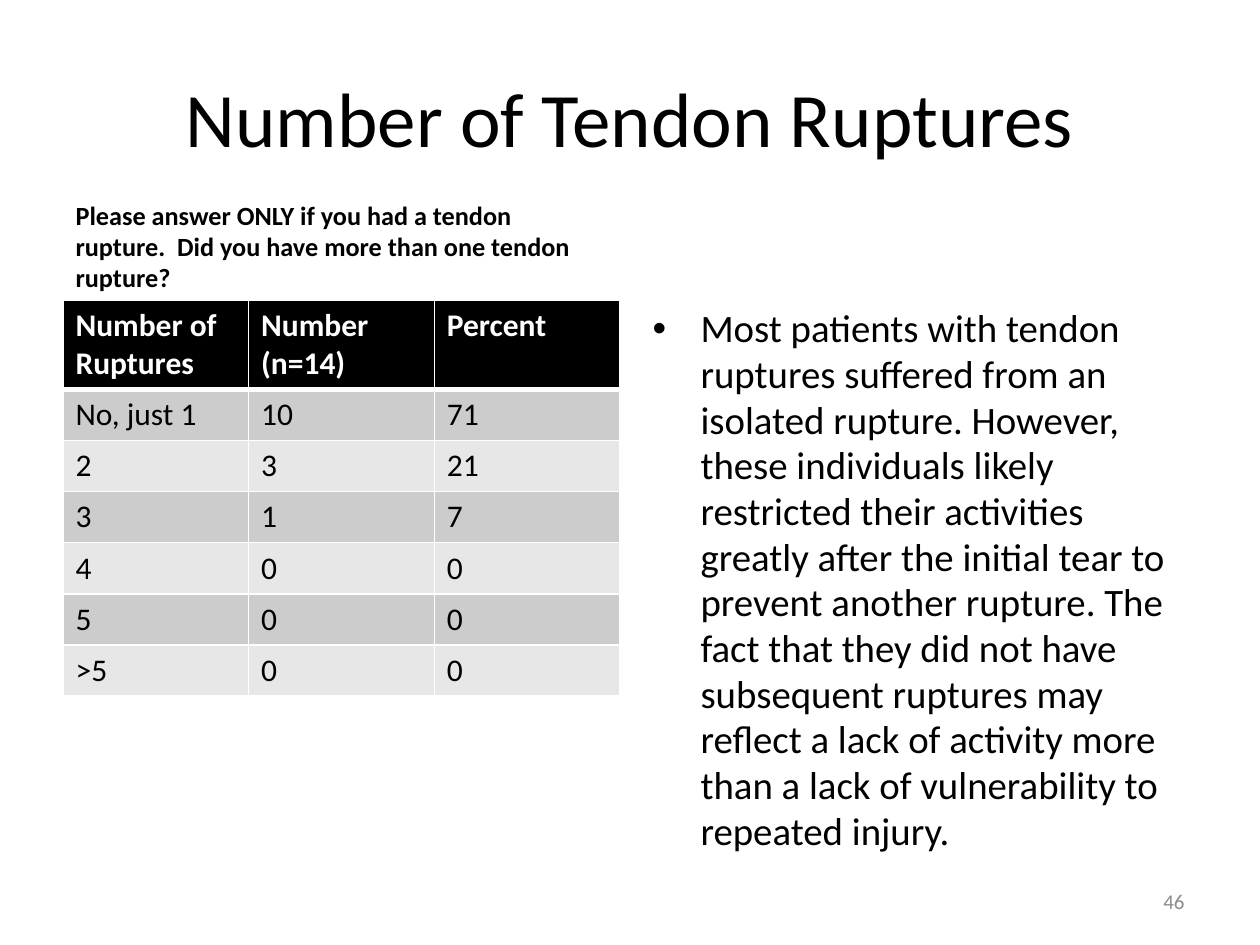
from lxml.etree import SubElement
from pptx import Presentation
from pptx.dml.color import RGBColor
from pptx.enum.text import MSO_ANCHOR, MSO_AUTO_SIZE, PP_ALIGN
from pptx.oxml.ns import qn
from pptx.util import Inches, Pt

FONT = "Calibri"
BLACK, WHITE, GRAY = "000000", "FFFFFF", "8C8C8C"
BANDS = ("CCCCCC", "E7E7E7")
MARGIN, COLUMN, GUTTER = 0.5, 4.42, 0.16
CONTENT_TOP = 2.38
HEADER_HEIGHT, ROW_HEIGHT = 0.7, 0.4
ROWS = [
    ("Number of Ruptures", "Number (n=14)", "Percent"),
    ("No, just 1", "10", "71"),
    ("2", "3", "21"),
    ("3", "1", "7"),
    ("4", "0", "0"),
    ("5", "0", "0"),
    (">5", "0", "0"),
]
QUESTION = (
    "Please answer ONLY if you had a tendon rupture.  "
    "Did you have more than one tendon rupture?"
)
FINDING = (
    "Most patients with tendon ruptures suffered from an isolated rupture. "
    "However, these individuals likely restricted their activities greatly "
    "after the initial tear to prevent another rupture. The fact that they "
    "did not have subsequent ruptures may reflect a lack of activity more "
    "than a lack of vulnerability to repeated injury."
)


def color(value):
    return RGBColor.from_string(value)


def write(frame, text, size, fill=BLACK, bold=False, align=PP_ALIGN.LEFT):
    paragraph = frame.paragraphs[0]
    paragraph.alignment = align
    run = paragraph.add_run()
    run.text = text
    run.font.name = FONT
    run.font.size = Pt(size)
    run.font.bold = bold
    run.font.color.rgb = color(fill)
    return paragraph


def place(shape, box, anchor):
    shape.left, shape.top, shape.width, shape.height = map(Inches, box)
    frame = shape.text_frame
    frame.word_wrap = True
    frame.auto_size = MSO_AUTO_SIZE.NONE
    frame.vertical_anchor = anchor
    return frame


def add_title(shape, box):
    frame = place(shape, box, MSO_ANCHOR.MIDDLE)
    write(frame, "Number of Tendon Ruptures", 44, align=PP_ALIGN.CENTER)


def add_question(shape, box):
    frame = place(shape, box, MSO_ANCHOR.BOTTOM)
    write(frame, QUESTION, 15, bold=True).line_spacing = 0.98


def add_finding(shape, box):
    frame = place(shape, box, MSO_ANCHOR.TOP)
    paragraph = write(frame, FINDING, 22.2)
    paragraph.line_spacing = 0.98
    properties = paragraph._p.get_or_add_pPr()
    properties.set("marL", str(Inches(0.38)))
    properties.set("indent", str(Inches(-0.38)))
    SubElement(properties, qn("a:buFont")).set("typeface", "Arial")
    SubElement(properties, qn("a:buChar")).set("char", "•")


def style_cell(cell, fill, edges):
    properties = cell._tc.get_or_add_tcPr()
    for edge, width in edges.items():
        line = SubElement(properties, qn(f"a:{edge}"))
        line.set("w", str(Pt(width)))
        solid = SubElement(line, qn("a:solidFill"))
        SubElement(solid, qn("a:srgbClr")).set("val", WHITE)
    cell.fill.solid()
    cell.fill.fore_color.rgb = color(fill)


def add_rupture_table(slide, box):
    left, top, width, height = map(Inches, box)
    columns = len(ROWS[0])
    table = slide.shapes.add_table(len(ROWS), columns, left, top, width, height).table
    for column in table.columns:
        column.width = width // columns
    for index, values in enumerate(ROWS):
        header = index == 0
        table.rows[index].height = Inches(HEADER_HEIGHT if header else ROW_HEIGHT)
        fill = BLACK if header else BANDS[(index - 1) % 2]
        edges = {
            "lnL": 1,
            "lnR": 1,
            "lnT": 3 if index == 1 else 1,
            "lnB": 3 if header else 1,
        }
        for cell, value in zip(table.rows[index].cells, values):
            write(cell.text_frame, value, 18, WHITE if header else BLACK, header)
            style_cell(cell, fill, edges)


def add_page_number(slide, box):
    shape = slide.shapes.add_textbox(*map(Inches, box))
    frame = place(shape, box, MSO_ANCHOR.MIDDLE)
    write(frame, "46", 12, GRAY, align=PP_ALIGN.RIGHT)


def main():
    presentation = Presentation()
    presentation.slide_width = Inches(10)
    presentation.slide_height = Inches(7.5)
    slide = presentation.slides.add_slide(presentation.slide_layouts[4])
    holders = {
        shape.placeholder_format.idx: shape for shape in slide.placeholders
    }
    right = MARGIN + COLUMN + GUTTER
    table_height = HEADER_HEIGHT + ROW_HEIGHT * (len(ROWS) - 1)
    add_title(holders[0], (MARGIN, 0.3, 10 - 2 * MARGIN, 1.25))
    add_question(holders[1], (MARGIN, CONTENT_TOP - 0.7, COLUMN, 0.7))
    add_rupture_table(slide, (MARGIN, CONTENT_TOP, COLUMN, table_height))
    add_finding(holders[4], (right, CONTENT_TOP, COLUMN, 4.32))
    add_page_number(slide, (7.17, 6.95, 2.33, 0.4))
    for index in (2, 3):
        element = holders[index]._element
        element.getparent().remove(element)
    presentation.save("out.pptx")


if __name__ == "__main__":
    main()
